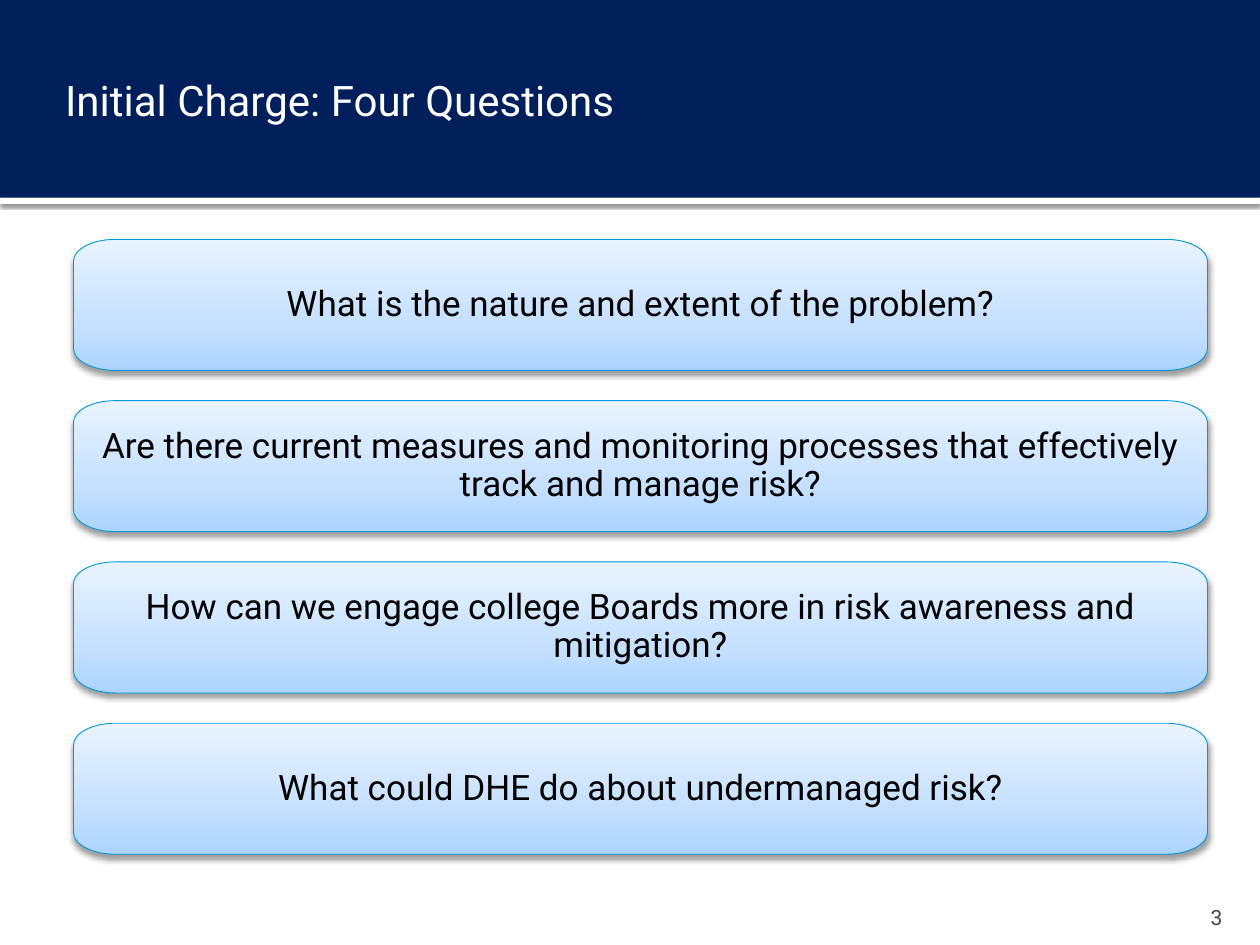
"""Build the "Initial Charge: Four Questions" slide."""
from pptx import Presentation
from pptx.dml.color import RGBColor
from pptx.enum.shapes import MSO_SHAPE
from pptx.enum.text import MSO_ANCHOR, PP_ALIGN
from pptx.oxml import parse_xml
from pptx.oxml.ns import nsdecls, qn
from pptx.util import Pt

NAVY = RGBColor(0x00, 0x1F, 0x5B)
WHITE = RGBColor(0xFF, 0xFF, 0xFF)
BLACK = RGBColor(0x00, 0x00, 0x00)
GRAY = RGBColor(0x45, 0x45, 0x45)
BLUE = RGBColor(0x00, 0x98, 0xD9)
GRADIENT = [
    (0, RGBColor(0xAD, 0xD4, 0xFF)),
    (35, RGBColor(0xC5, 0xE0, 0xFF)),
    (100, RGBColor(0xE9, 0xF3, 0xFF)),
]
FONT = "Roboto"
QUESTIONS = [
    "What is the nature and extent of the problem?",
    "Are there current measures and monitoring processes that effectively track and manage risk?",
    "How can we engage college Boards more in risk awareness and mitigation?",
    "What could DHE do about undermanaged risk?",
]
LEFT, TOP, PITCH = Pt(42), Pt(136.8), Pt(92.16)
WIDTH, HEIGHT = Pt(648), Pt(74.88)
RADIUS_X, RADIUS_Y = Pt(24), Pt(12.48)
CURVE = 0.55


def add_shadow(shape, opacity, blur, distance):
    shape._element.spPr.append(parse_xml(
        f'<a:effectLst {nsdecls("a")}><a:outerShdw blurRad="{Pt(blur)}" dist="{Pt(distance)}" '
        f'dir="5400000" rotWithShape="0"><a:srgbClr val="{BLACK}">'
        f'<a:alpha val="{opacity * 1000}"/></a:srgbClr></a:outerShdw></a:effectLst>'
    ))


def write_text(shape, text, size, color, alignment, anchor, insets):
    frame = shape.text_frame
    frame.word_wrap = True
    frame.vertical_anchor = anchor
    frame.margin_left, frame.margin_top, frame.margin_right, frame.margin_bottom = map(Pt, insets)
    paragraph = frame.paragraphs[0]
    paragraph.text = text
    paragraph.alignment = alignment
    paragraph.font.name = FONT
    paragraph.font.size = Pt(size)
    paragraph.font.color.rgb = color
    return paragraph


presentation = Presentation()
presentation.slide_width, presentation.slide_height = Pt(720), Pt(540)
slide = presentation.slides.add_slide(presentation.slide_layouts[5])
shapes = slide.shapes

for top, height, color in [(113, 3.6, WHITE), (0, 113, NAVY)]:
    band = shapes.add_shape(MSO_SHAPE.RECTANGLE, 0, Pt(top), Pt(720), Pt(height))
    band.fill.solid()
    band.fill.fore_color.rgb = color
    band.line.fill.background()
    if color == WHITE:
        add_shadow(band, 60, 2.5, 0.8)
    else:
        band.shadow.inherit = False

number = shapes.add_textbox(Pt(648), Pt(509.76), Pt(57.6), Pt(21.6))
write_text(number, "3", 12, GRAY, PP_ALIGN.RIGHT, MSO_ANCHOR.BOTTOM, (7.2, 3.6, 7.2, 0))

stops = "".join(
    f'<a:gs pos="{position * 1000}"><a:srgbClr val="{color}"/></a:gs>' for position, color in GRADIENT
)
right, bottom = WIDTH - RADIUS_X, HEIGHT - RADIUS_Y
corners = [
    ((0, RADIUS_Y), (0, 0), (RADIUS_X, 0)),
    ((right, 0), (WIDTH, 0), (WIDTH, RADIUS_Y)),
    ((WIDTH, bottom), (WIDTH, HEIGHT), (right, HEIGHT)),
    ((RADIUS_X, HEIGHT), (0, HEIGHT), (0, bottom)),
]
outline = [point for start, vertex, end in corners for point in (start, end)]

for index, question in enumerate(QUESTIONS):
    builder = shapes.build_freeform(*outline[0])
    builder.add_line_segments(outline[1:], close=True)
    box = builder.convert_to_shape(LEFT, TOP + index * PITCH)
    segments = list(box._element.iter(qn("a:lnTo")))
    for segment, (start, vertex, end) in zip(segments[::2], corners):
        controls = [
            [round(a + CURVE * (b - a)) for a, b in zip(point, vertex)] for point in (start, end)
        ]
        points = "".join(f'<a:pt x="{x}" y="{y}"/>' for x, y in [*controls, end])
        curve = parse_xml(f'<a:cubicBezTo {nsdecls("a")}>{points}</a:cubicBezTo>')
        segment.getparent().replace(segment, curve)
    box._element.spPr.append(parse_xml(
        f'<a:gradFill {nsdecls("a")} rotWithShape="1"><a:gsLst>{stops}</a:gsLst>'
        '<a:lin ang="16200000" scaled="0"/></a:gradFill>'
    ))
    box.line.color.rgb = BLUE
    box.line.width = Pt(0.5)
    add_shadow(box, 38, 3.5, 2)
    paragraph = write_text(box, question, 20, BLACK, PP_ALIGN.CENTER, MSO_ANCHOR.MIDDLE, [14.4] * 4)
    paragraph.line_spacing = 0.9

title = shapes.title
title.left, title.top, title.width, title.height = Pt(30), Pt(24), Pt(660), Pt(66)
write_text(
    title, "Initial Charge: Four Questions", 24, WHITE, PP_ALIGN.LEFT, MSO_ANCHOR.MIDDLE, (7.2, 3.6, 3.6, 3.6)
)
shapes._spTree.append(title._element)

presentation.save("out.pptx")
